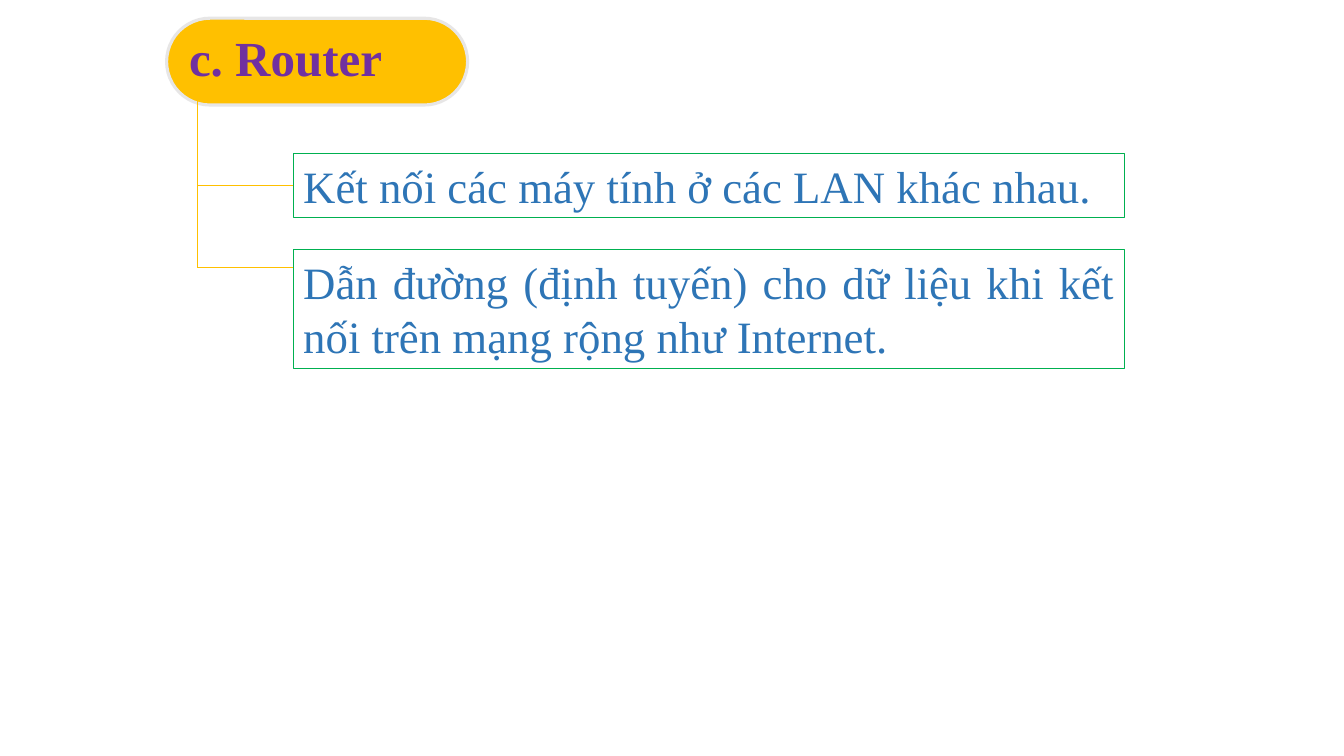
from dataclasses import dataclass

from pptx import Presentation
from pptx import util as u
from pptx.dml.color import RGBColor
from pptx.enum import shapes, text
from pptx.oxml import ns, xmlchemy

GOLD = RGBColor(0xFF, 0xC0, 0x00)
PALE_GRAY = RGBColor(0xE7, 0xE6, 0xE6)
PURPLE = RGBColor(0x70, 0x30, 0xA0)
GREEN = RGBColor(0x00, 0xB0, 0x50)
BLUE = RGBColor(0x2E, 0x75, 0xB6)
FONT = "Times New Roman"
TRUNK_X = 141
BOX_LEFT = 209.5
BOX_WIDTH = 594


@dataclass(frozen=True)
class RouterFunction:
    wording: str
    top: float
    height: float
    trunk_top: float
    branch_y: float


FUNCTIONS = (
    RouterFunction("Kết nối các máy tính ở các LAN khác nhau.", 109.5, 46, 72, 132.5),
    RouterFunction(
        "Dẫn đường (định tuyến) cho dữ liệu khi kết nối trên mạng rộng như Internet.",
        178.5, 85, 130.5, 191,
    ),
)


def write_text(shape, wording: str, *, size: float, color: RGBColor, bold: bool = False,
               alignment=text.PP_ALIGN.LEFT, anchor=text.MSO_ANCHOR.TOP,
               wrap: bool = True) -> None:
    frame = shape.text_frame
    frame.word_wrap = wrap
    frame.auto_size = text.MSO_AUTO_SIZE.NONE
    frame.vertical_anchor = anchor
    paragraph = frame.paragraphs[0]
    paragraph.text = wording
    paragraph.alignment = alignment
    paragraph.line_spacing = 1.0
    font = paragraph.runs[0].font
    font.name = FONT
    font.size = u.Pt(size)
    font.bold = bold
    font.color.rgb = color


def place(shape, left: float, top: float, width: float, height: float) -> None:
    shape.left, shape.top = u.Pt(left), u.Pt(top)
    shape.width, shape.height = u.Pt(width), u.Pt(height)


def add_line(slide, start: tuple[float, float], end: tuple[float, float]):
    connector = slide.shapes.add_connector(
        shapes.MSO_CONNECTOR.STRAIGHT, *(u.Pt(value) for value in start + end))
    connector.line.color.rgb = GOLD
    connector.line.width = u.Pt(0.5)
    connector._element.spPr.append(xmlchemy.OxmlElement("a:effectLst"))
    return connector


def add_heading(slide) -> None:
    pill = slide.shapes.add_shape(
        shapes.MSO_SHAPE.ROUNDED_RECTANGLE, u.Pt(119), u.Pt(13), u.Pt(215), u.Pt(62))
    pill.adjustments[0] = 0.5
    pill.shadow.inherit = False
    pill.fill.solid()
    pill.fill.fore_color.rgb = GOLD
    pill.line.color.rgb = PALE_GRAY
    pill.line.width = u.Pt(2.25)

    title = slide.shapes.title
    pill._element.addnext(title._element)
    place(title, 135, 13, 180, 55)
    frame = title.text_frame
    frame.margin_left = frame.margin_right = frame.margin_top = frame.margin_bottom = u.Pt(0)
    write_text(title, "c. Router", size=35, color=PURPLE, bold=True,
               anchor=text.MSO_ANCHOR.MIDDLE, wrap=False)


def add_function(slide, function: RouterFunction) -> None:
    box = slide.shapes.add_textbox(
        u.Pt(BOX_LEFT), u.Pt(function.top), u.Pt(BOX_WIDTH), u.Pt(function.height))
    box.line.color.rgb = GREEN
    box.line.width = u.Pt(0.75)
    write_text(box, function.wording, size=32, color=BLUE, alignment=text.PP_ALIGN.JUSTIFY)

    corner = (TRUNK_X, function.branch_y)
    add_line(slide, (TRUNK_X, function.trunk_top), corner)
    branch = add_line(slide, corner, (BOX_LEFT, function.branch_y))
    if function.branch_y == function.top + function.height / 2:
        branch.end_connect(box, 1)


def main() -> None:
    presentation = Presentation()
    presentation.slide_width = u.Pt(960)
    presentation.slide_height = u.Pt(540)
    slide = presentation.slides.add_slide(presentation.slide_layouts[5])
    add_heading(slide)
    for function in FUNCTIONS:
        add_function(slide, function)
    presentation.save("out.pptx")


if __name__ == "__main__":
    main()
